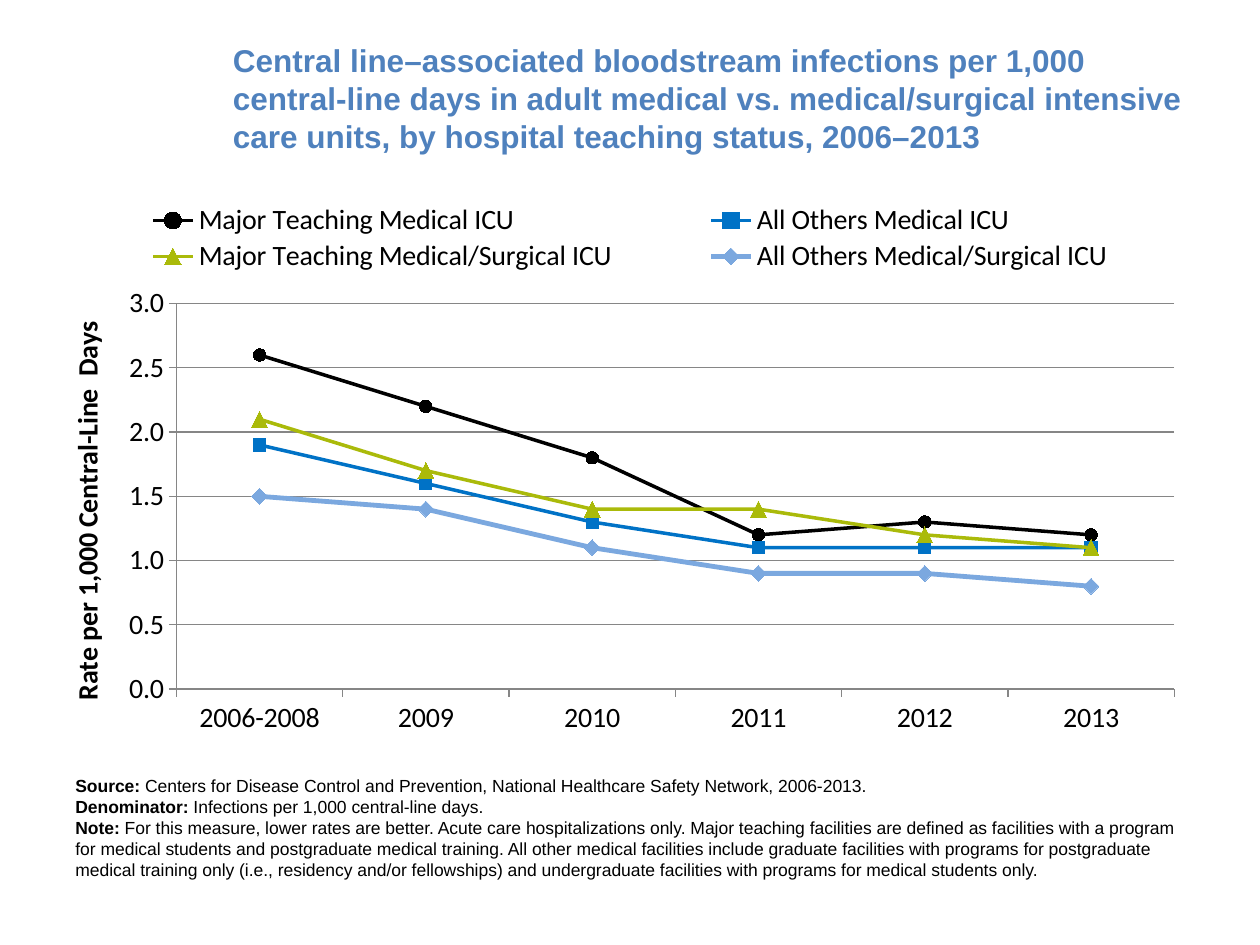
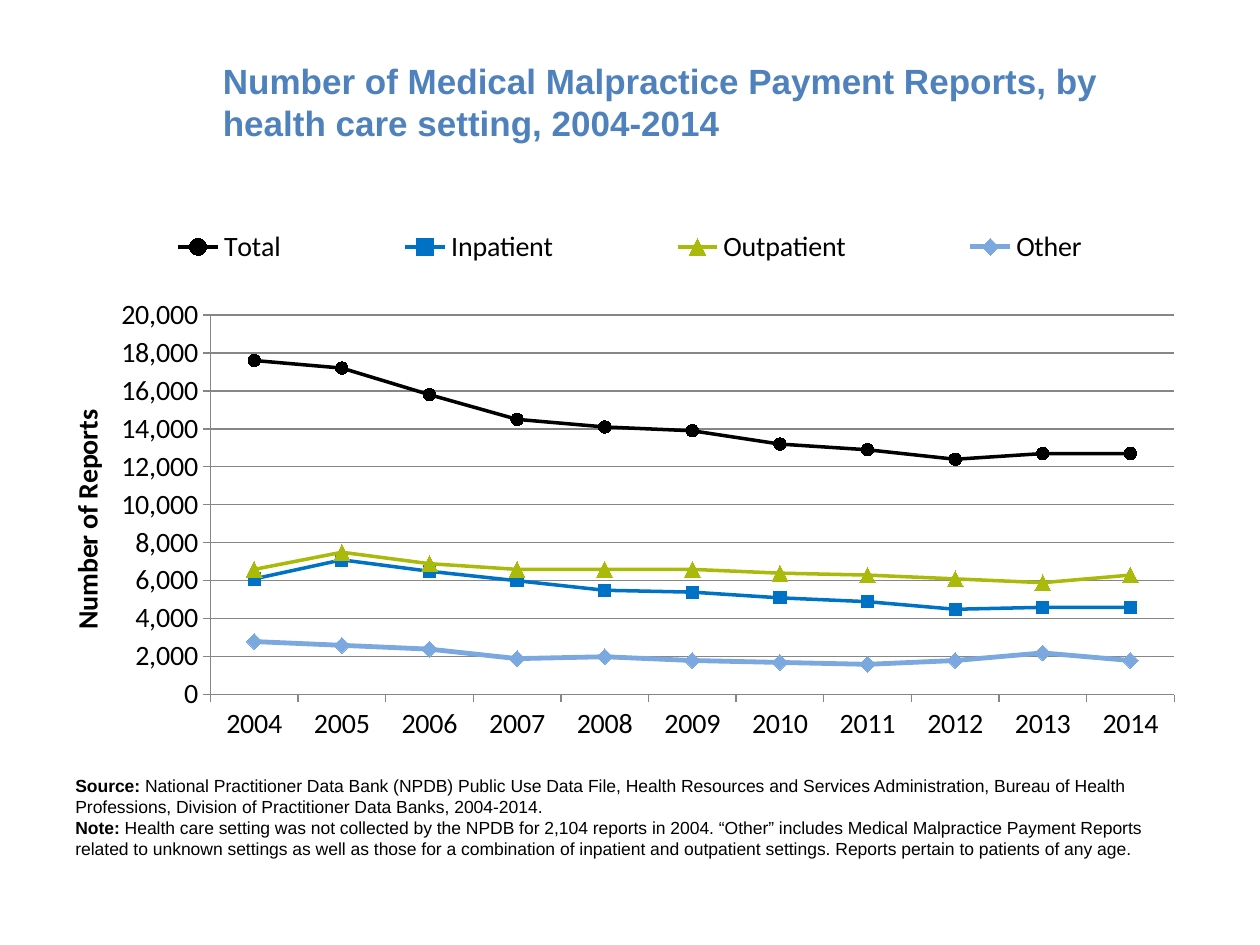
from lxml.etree import SubElement
from pptx import Presentation
from pptx.chart.data import CategoryChartData
from pptx.dml.color import RGBColor
from pptx.enum.chart import XL_CHART_TYPE as ChartType
from pptx.enum.chart import XL_LEGEND_POSITION as LegendPosition
from pptx.enum.chart import XL_MARKER_STYLE as Marker
from pptx.enum.chart import XL_TICK_MARK as TickMark
from pptx.enum.text import MSO_ANCHOR as Anchor
from pptx.oxml.ns import qn
from pptx.util import Inches, Pt

BLACK = RGBColor(0x00, 0x00, 0x00)
TITLE_BLUE = RGBColor(0x4F, 0x81, 0xBD)
BLUE = RGBColor(0x00, 0x72, 0xC6)
GREEN = RGBColor(0xAA, 0xBA, 0x0A)
LIGHT_BLUE = RGBColor(0x7B, 0xA8, 0xDF)
GRAY = RGBColor(0x86, 0x86, 0x86)

LINE_STYLES = [
    (BLACK, 2, Marker.CIRCLE, 7),
    (BLUE, 2, Marker.SQUARE, 7),
    (GREEN, 2, Marker.TRIANGLE, 9),
    (LIGHT_BLUE, 2.75, Marker.DIAMOND, 9),
]


def style_font(font, name, size, color=BLACK, bold=False):
    font.name = name
    font.size = Pt(size)
    font.bold = bold
    font.color.rgb = color


def add_text(slide, paragraphs, left, top, width, height, size,
             color=BLACK, anchor=Anchor.TOP):
    frame = slide.shapes.add_textbox(
        Inches(left), Inches(top), Inches(width), Inches(height)).text_frame
    frame.word_wrap = True
    frame.vertical_anchor = anchor
    for index, (lead, rest) in enumerate(paragraphs):
        paragraph = frame.paragraphs[0] if index == 0 else frame.add_paragraph()
        for text, bold in ((lead, True), (rest, False)):
            if text:
                run = paragraph.add_run()
                run.text = text
                style_font(run.font, "Arial", size, color, bold)


def add_title(slide, text, left, top, size):
    add_text(slide, [(text, "")], left, top, 7.75, 0.95, size,
             color=TITLE_BLUE, anchor=Anchor.MIDDLE)


def add_footnotes(slide, notes, height):
    add_text(slide, notes, 0.5, 6.1, 9, height, 10)


def set_layout(parent, box, inner=False):
    for old in parent.findall(qn("c:layout")):
        parent.remove(old)
    layout = SubElement(parent, qn("c:layout"))
    manual = SubElement(layout, qn("c:manualLayout"))
    settings = [("layoutTarget", "inner")] if inner else []
    settings += [("xMode", "edge"), ("yMode", "edge")]
    settings += zip("xywh", box)
    for tag, value in settings:
        SubElement(manual, qn(f"c:{tag}")).set("val", str(value))
    return layout


def style_axis(axis):
    axis.major_tick_mark = TickMark.OUTSIDE
    axis.minor_tick_mark = TickMark.NONE
    axis.format.line.color.rgb = GRAY
    axis.format.line.width = Pt(0.75)
    style_font(axis.tick_labels.font, "Calibri", 16)


def style_value_axis(axis, title, maximum, step, number_format):
    style_axis(axis)
    axis.minimum_scale = 0
    axis.maximum_scale = maximum
    axis.major_unit = step
    axis.tick_labels.number_format = number_format
    axis.tick_labels.number_format_is_linked = False
    axis.has_major_gridlines = True
    axis.major_gridlines.format.line.color.rgb = GRAY
    axis.major_gridlines.format.line.width = Pt(0.75)
    title_frame = axis.axis_title.text_frame
    title_frame.text = title
    style_font(title_frame.paragraphs[0].runs[0].font, "Calibri", 16, bold=True)


def style_lines(plot):
    plot.vary_by_categories = False
    for line, (color, width, marker, size) in zip(plot.series, LINE_STYLES):
        line.smooth = False
        line.format.line.color.rgb = color
        line.format.line.width = Pt(width)
        line.marker.style = marker
        line.marker.size = size
        line.marker.format.fill.solid()
        line.marker.format.fill.fore_color.rgb = color
        line.marker.format.line.color.rgb = color


def add_trend_chart(slide, categories, trends, axis_title, maximum, step,
                    number_format, plot_box, legend_box):
    data = CategoryChartData(number_format=number_format)
    data.categories = categories
    for name, values in trends.items():
        data.add_series(name, values)
    chart = slide.shapes.add_chart(
        ChartType.LINE_MARKERS, Inches(0.5), Inches(1.6), Inches(9),
        Inches(4.5), data).chart
    style_font(chart.font, "Arial", 10)
    chart.has_title = False
    style_axis(chart.category_axis)
    style_value_axis(chart.value_axis, axis_title, maximum, step, number_format)
    style_lines(chart.plots[0])

    chart.has_legend = True
    legend = chart.legend
    legend.position = LegendPosition.TOP
    legend.include_in_layout = False
    style_font(legend.font, "Calibri", 16)
    legend_xml = legend.font and chart.element.find(".//" + qn("c:legend"))
    legend_layout = set_layout(legend_xml, legend_box)
    legend_xml.find(qn("c:legendPos")).addnext(legend_layout)

    plot_area = chart.element.find(".//" + qn("c:plotArea"))
    plot_area.insert(0, set_layout(plot_area, plot_box, inner=True))


def add_infections_slide(slide):
    add_title(slide, "Central line–associated bloodstream infections per 1,000 "
              "central-line days in adult medical vs. medical/surgical intensive "
              "care units, by hospital teaching status, 2006–2013", 1.75, 0.3, 18)
    add_footnotes(slide, [
        ("Source: ", "Centers for Disease Control and Prevention, National "
         "Healthcare Safety Network, 2006-2013."),
        ("Denominator:", " Infections per 1,000 central-line days."),
        ("Note: ", "For this measure, lower rates are better. Acute care "
         "hospitalizations only. Major teaching facilities are defined as "
         "facilities with a program for medical students and postgraduate medical "
         "training. All other medical facilities include graduate facilities with "
         "programs for postgraduate medical training only (i.e., residency and/or "
         "fellowships) and undergraduate facilities with programs for medical "
         "students only."),
    ], 0.94)
    add_trend_chart(
        slide, ["2006-2008", "2009", "2010", "2011", "2012", "2013"],
        {
            "Major Teaching Medical ICU": [2.6, 2.2, 1.8, 1.2, 1.3, 1.2],
            "All Others Medical ICU": [1.9, 1.6, 1.3, 1.1, 1.1, 1.1],
            "Major Teaching Medical/Surgical ICU": [2.1, 1.7, 1.4, 1.4, 1.2, 1.1],
            "All Others Medical/Surgical ICU": [1.5, 1.4, 1.1, 0.9, 0.9, 0.8],
        },
        "Rate per 1,000 Central-Line  Days", 3, 0.5, "0.0",
        plot_box=(0.1, 0.18, 0.88, 0.68), legend_box=(0, 0, 1, 0.13))


def add_malpractice_slide(slide):
    add_title(slide, "Number of Medical Malpractice Payment Reports, by "
              "health care setting, 2004-2014", 1.67, 0.33, 20)
    add_footnotes(slide, [
        ("Source: ", "National Practitioner Data Bank (NPDB) Public Use Data File, "
         "Health Resources and Services Administration, Bureau of Health "
         "Professions, Division of Practitioner Data Banks, 2004-2014."),
        ("Note:", " Health care setting was not collected by the NPDB for 2,104 "
         "reports in 2004. “Other” includes Medical Malpractice Payment Reports "
         "related to unknown settings as well as those for a combination of "
         "inpatient and outpatient settings. Reports pertain to patients of any "
         "age."),
    ], 0.77)
    add_trend_chart(
        slide, [str(year) for year in range(2004, 2015)],
        {
            "Total": [17600, 17200, 15800, 14500, 14100, 13900, 13200, 12900,
                      12400, 12700, 12700],
            "Inpatient": [6100, 7100, 6500, 6000, 5500, 5400, 5100, 4900, 4500,
                          4600, 4600],
            "Outpatient": [6600, 7500, 6900, 6600, 6600, 6600, 6400, 6300, 6100,
                           5900, 6300],
            "Other": [2800, 2600, 2400, 1900, 2000, 1800, 1700, 1600, 1800, 2200,
                      1800],
        },
        "Number of Reports", 20000, 2000, "#,##0",
        plot_box=(0.13, 0.2, 0.85, 0.67), legend_box=(0, 0.02, 1, 0.12))


def main():
    deck = Presentation()
    deck.slide_width = Inches(10)
    deck.slide_height = Inches(7.5)
    blank = deck.slide_layouts[6]
    add_infections_slide(deck.slides.add_slide(blank))
    add_malpractice_slide(deck.slides.add_slide(blank))
    deck.save("out.pptx")


if __name__ == "__main__":
    main()
